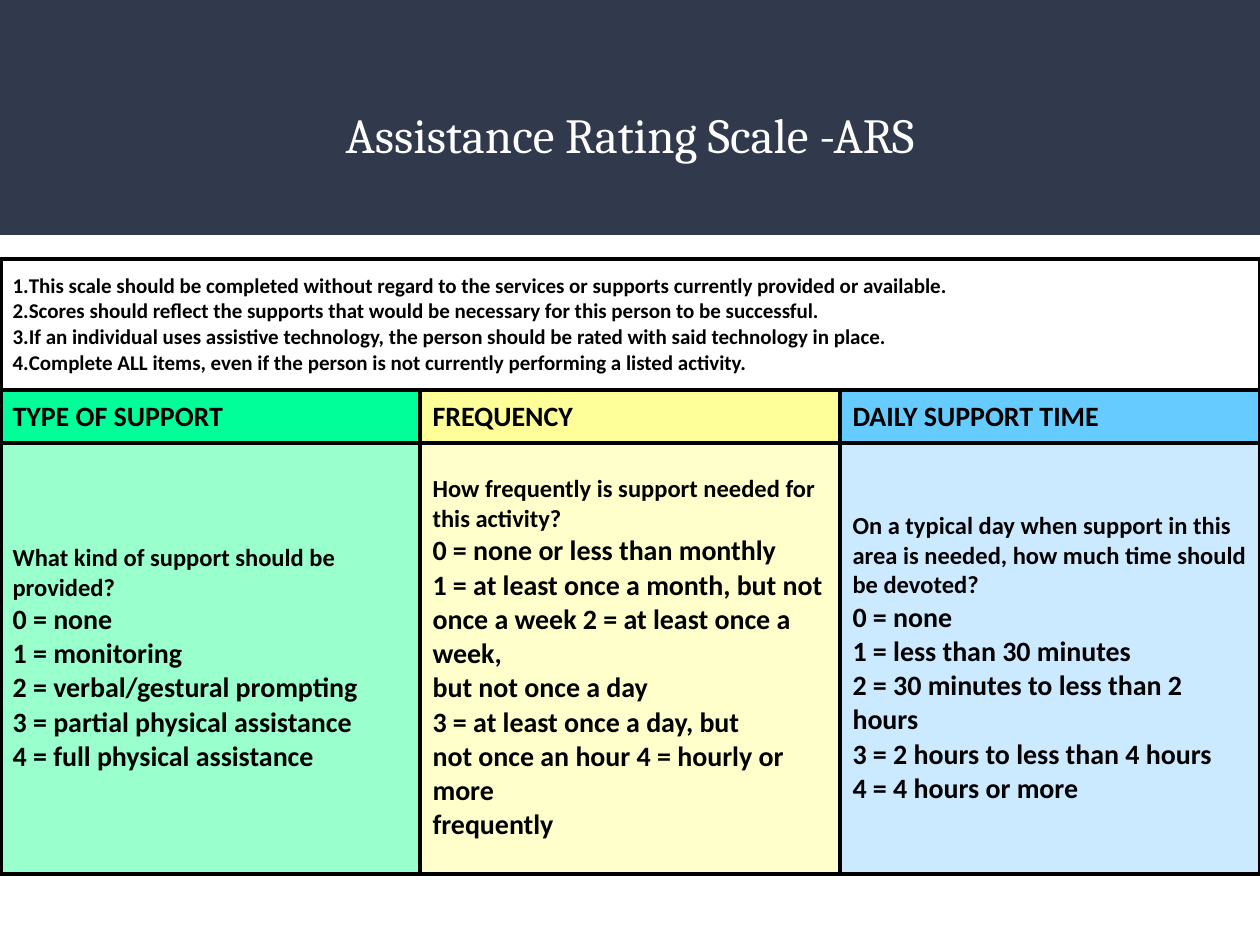
from lxml import etree
from pptx import Presentation
from pptx.dml.color import RGBColor
from pptx.enum.shapes import MSO_SHAPE
from pptx.enum.text import MSO_ANCHOR, PP_ALIGN
from pptx.oxml.ns import qn
from pptx.util import Pt

RECTANGLE = MSO_SHAPE.RECTANGLE
TOP, MIDDLE = MSO_ANCHOR.TOP, MSO_ANCHOR.MIDDLE
CENTER = PP_ALIGN.CENTER

PX = 914400 / 126
BLACK, WHITE = "000000", "FFFFFF"

# Rule widths in points, left to right and top to bottom
COLUMN_RULES = [3.28, 2.16, 2.19, 2.89]
ROW_RULES = [2.25, 3.12, 2.16, 2.88]
ROW_HEIGHTS = [131, 53, 431]

INSTRUCTIONS = [
    "This scale should be completed without regard to the services or supports currently provided or available.",
    "Scores should reflect the supports that would be necessary for this person to be successful.",
    "If an individual uses assistive technology, the person should be rated with said technology in place.",
    "Complete ALL items, even if the person is not currently performing a listed activity.",
]
# Heading, heading fill, body fill, question, ratings
SCALES = [
    ("TYPE OF SUPPORT", "00FF99", "99FFCC",
     "What kind of support should be provided?",
     ["0 = none", "1 = monitoring", "2 = verbal/gestural prompting",
      "3 = partial physical assistance", "4 = full physical assistance"]),
    ("FREQUENCY", "FFFF99", "FFFFCC",
     "How frequently is support needed for this activity?",
     ["0 = none or less than monthly",
      "1 = at least once a month, but not once a week 2 = at least once a week,",
      "but not once a day\n3 = at least once a day, but",
      "not once an hour 4 = hourly or more", "frequently"]),
    ("DAILY SUPPORT TIME", "66CCFF", "CCEAFF",
     "On a typical day when support in this area is needed, how much time should be devoted?",
     ["0 = none", "1 = less than 30 minutes",
      "2 = 30 minutes to less than 2 hours",
      "3 = 2 hours to less than 4 hours", "4 = 4 hours or more"]),
]


def emu(px):
    return round(px * PX)


def color(value):
    return RGBColor.from_string(value)


def add_span(para, text, size, font="Calibri", ink=BLACK, bold=True):
    for index, line in enumerate(text.split("\n")):
        if index:
            para.add_line_break()
        span = para.add_run()
        span.text = line
        span.font.size = Pt(size)
        span.font.name = font
        span.font.bold = bold
        span.font.color.rgb = color(ink)


def add_number(para):
    props = para._p.get_or_add_pPr()
    props.set("marL", "0")
    props.set("indent", str(emu(-10)))
    bullet_color = etree.SubElement(props, qn("a:buClr"))
    etree.SubElement(bullet_color, qn("a:srgbClr"), val=BLACK)
    etree.SubElement(props, qn("a:buAutoNum"), type="arabicPeriod")


def set_borders(cell, row, column):
    props = cell._tc.get_or_add_tcPr()
    widths = [("a:lnL", COLUMN_RULES[column]), ("a:lnR", COLUMN_RULES[column + 1]),
              ("a:lnT", ROW_RULES[row]), ("a:lnB", ROW_RULES[row + 1])]
    for index, (tag, width) in enumerate(widths):
        line = etree.Element(qn(tag), w=str(Pt(width)))
        fill = etree.SubElement(line, qn("a:solidFill"))
        etree.SubElement(fill, qn("a:srgbClr"), val=BLACK)
        props.insert(index, line)


def fill_cell(cell, fill, lines, numbered=False):
    """Write (text, size) lines, one paragraph each."""
    cell.fill.solid()
    cell.fill.fore_color.rgb = color(fill)
    cell.vertical_anchor = MIDDLE
    frame = cell.text_frame
    for index, (text, size) in enumerate(lines):
        para = frame.add_paragraph() if index else frame.paragraphs[0]
        if numbered:
            add_number(para)
        add_span(para, text, size)


def add_title_band(page, left, top, width, height):
    band = page.shapes.add_shape(RECTANGLE, emu(left), emu(top), emu(width), emu(height))
    band.shadow.inherit = False
    band.fill.solid()
    band.fill.fore_color.rgb = color("31394D")
    band.line.fill.background()

    box = page.shapes.add_textbox(emu(left + 43), emu(top + 92), emu(width - 86), emu(115))
    frame = box.text_frame
    frame.word_wrap = True
    frame.vertical_anchor = TOP
    frame.margin_left = frame.margin_right = emu(13)
    frame.margin_top = frame.margin_bottom = emu(13)
    para = frame.paragraphs[0]
    para.alignment = CENTER
    add_span(para, "Assistance Rating Scale -ARS", 28, "Cambria", WHITE, False)


def add_rating_table(page, left, top, width):
    rows, columns = len(ROW_HEIGHTS), len(SCALES)
    table = page.shapes.add_table(rows, columns, emu(left), emu(top),
                                  emu(width), emu(sum(ROW_HEIGHTS))).table
    table.first_row = table.horz_banding = False
    for row, height in enumerate(ROW_HEIGHTS):
        table.rows[row].height = emu(height)

    # Instructions across the full width
    table.cell(0, 0).merge(table.cell(0, columns - 1))
    fill_cell(table.cell(0, 0), WHITE, [(text, 12) for text in INSTRUCTIONS], True)

    # One column for each scale
    for column, (heading, head_fill, body_fill, question, ratings) in enumerate(SCALES):
        table.columns[column].width = emu(width / columns)
        fill_cell(table.cell(1, column), head_fill, [(heading, 16)])
        body = [(question, 14)] + [(rating, 16) for rating in ratings]
        fill_cell(table.cell(2, column), body_fill, body)

    for row in range(rows):
        for column in range(columns):
            set_borders(table.cell(row, column), row, column)


def main():
    deck = Presentation()
    deck.slide_width, deck.slide_height = emu(1260), emu(945)
    page = deck.slides.add_slide(deck.slide_layouts[6])
    add_title_band(page, 0, 0, 1260, 235)
    add_rating_table(page, 0, 259, 1260)
    deck.save("out.pptx")


if __name__ == "__main__":
    main()
